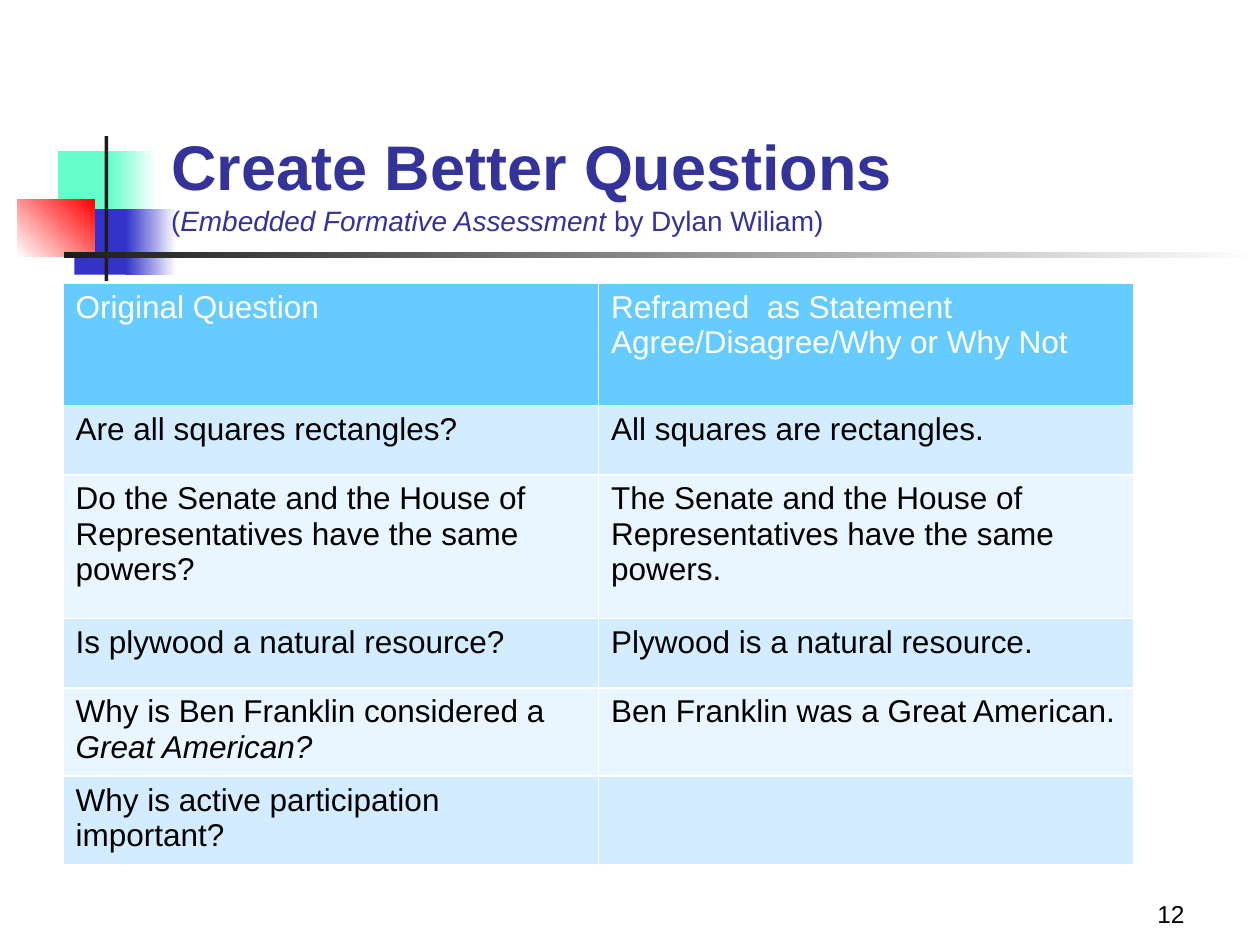
from pptx import Presentation
from pptx.dml.color import RGBColor
from pptx.enum import shapes, text
from pptx.util import Inches, Pt

COLORS = {
    "white": "FFFFFF", "black": "000000", "ink": "1C1C1C", "title": "333399",
    "mint": "66FFCC", "blue": "3333CC", "red": "FF0000",
    "header": "66CCFF", "band_dark": "D3ECFF", "band_light": "EAF6FF",
}

# box (left, top, width, height), colour stops, gradient angle
ORNAMENTS = [
    ((0.46, 1.2, 0.48, 0.52), ["mint"], 0),
    ((0.88, 1.2, 0.36, 0.52), ["mint", "white"], 0),
    ((0.59, 1.66, 0.46, 0.52), ["blue"], 0),
    ((1, 1.66, 0.4, 0.52), ["blue", "white"], 0),
    ((0.14, 1.58, 0.61, 0.46), ["white", "red"], 45),
    ((0.83, 1.08, 0.03, 1.15), ["ink"], 0),
    ((0.51, 2, 9.49, 0.05), ["ink", "white"], 0),
]

# Text is a list of paragraphs; a paragraph is a list of (words, italic) runs.
HEADING = "Create Better Questions "
SUBHEADING = [("(", False), ("Embedded Formative Assessment ", True),
              ("by Dylan Wiliam)", False)]
QUESTIONS = [
    ([[("Original Question", False)]],
     [[("Reframed  as Statement", False)],
      [("Agree/Disagree/Why or Why Not", False)]]),
    ([[("Are all squares rectangles?", False)]],
     [[("All squares are rectangles.", False)]]),
    ([[("Do the Senate and the House of Representatives have the same powers?", False)]],
     [[("The Senate and the House of Representatives have the same powers.", False)]]),
    ([[("Is plywood a natural resource?", False)]],
     [[("Plywood is a natural resource.", False)]]),
    ([[("Why is Ben Franklin considered a ", False), ("Great American?", True)]],
     [[("Ben Franklin was a Great American.", False)]]),
    ([[("Why is active participation important?", False)]], []),
]
ROW_HEIGHTS = [0.97, 0.55, 1.14, 0.55, 0.7, 0.7]
TABLE_BOX = (0.5, 2.25, 8.5, sum(ROW_HEIGHTS))
PAGE_NUMBER = "12"


def rgb(name):
    return RGBColor.from_string(COLORS[name])


def inches(box):
    return [Inches(v) for v in box]


def add_run(p, words, size, color, bold=False, italic=False):
    r = p.add_run()
    r.text = words
    r.font.name = "Arial"
    r.font.size = Pt(size)
    r.font.bold = bold
    r.font.italic = italic
    r.font.color.rgb = rgb(color)


def add_ornament(slide, box, stops, angle):
    sp = slide.shapes.add_shape(shapes.MSO_SHAPE.RECTANGLE, *inches(box))
    sp.shadow.inherit = False
    sp.line.fill.background()
    if len(stops) == 1:
        sp.fill.solid()
        sp.fill.fore_color.rgb = rgb(stops[0])
    else:
        sp.fill.gradient()
        sp.fill.gradient_angle = angle
        for stop, name in zip(sp.fill.gradient_stops, stops):
            stop.color.rgb = rgb(name)


def add_bottom_text(slide, box):
    """Add a bottom-anchored text box and return its first paragraph."""
    tf = slide.shapes.add_textbox(*inches(box)).text_frame
    tf.word_wrap = True
    tf.vertical_anchor = text.MSO_ANCHOR.BOTTOM
    return tf.paragraphs[0]


def fill_cell(cell, paragraphs, fill, color):
    cell.fill.solid()
    cell.fill.fore_color.rgb = rgb(fill)
    tf = cell.text_frame
    for i, runs in enumerate(paragraphs):
        p = tf.add_paragraph() if i else tf.paragraphs[0]
        for words, italic in runs:
            add_run(p, words, 18, color, italic=italic)


def add_questions(slide):
    table = slide.shapes.add_table(len(QUESTIONS), 2, *inches(TABLE_BOX)).table
    for i, (row, height) in enumerate(zip(QUESTIONS, ROW_HEIGHTS)):
        table.rows[i].height = Inches(height)
        if i == 0:
            fill, color = "header", "white"
        else:
            fill, color = ("band_dark" if i % 2 else "band_light"), "black"
        for j, paragraphs in enumerate(row):
            fill_cell(table.cell(i, j), paragraphs, fill, color)


def main():
    prs = Presentation()
    prs.slide_width, prs.slide_height = Inches(10), Inches(7.5)
    slide = prs.slides.add_slide(prs.slide_layouts[6])

    for ornament in ORNAMENTS:
        add_ornament(slide, *ornament)

    p = add_bottom_text(slide, (1.26, 0.68, 8.52, 1.25))
    add_run(p, HEADING, 36, "title", bold=True)
    p.add_line_break()
    for words, italic in SUBHEADING:
        add_run(p, words, 16, "title", italic=italic)

    add_questions(slide)

    p = add_bottom_text(slide, (7.42, 6.92, 2.08, 0.5))
    p.alignment = text.PP_ALIGN.RIGHT
    add_run(p, PAGE_NUMBER, 14, "black")

    prs.save("out.pptx")


if __name__ == "__main__":
    main()
